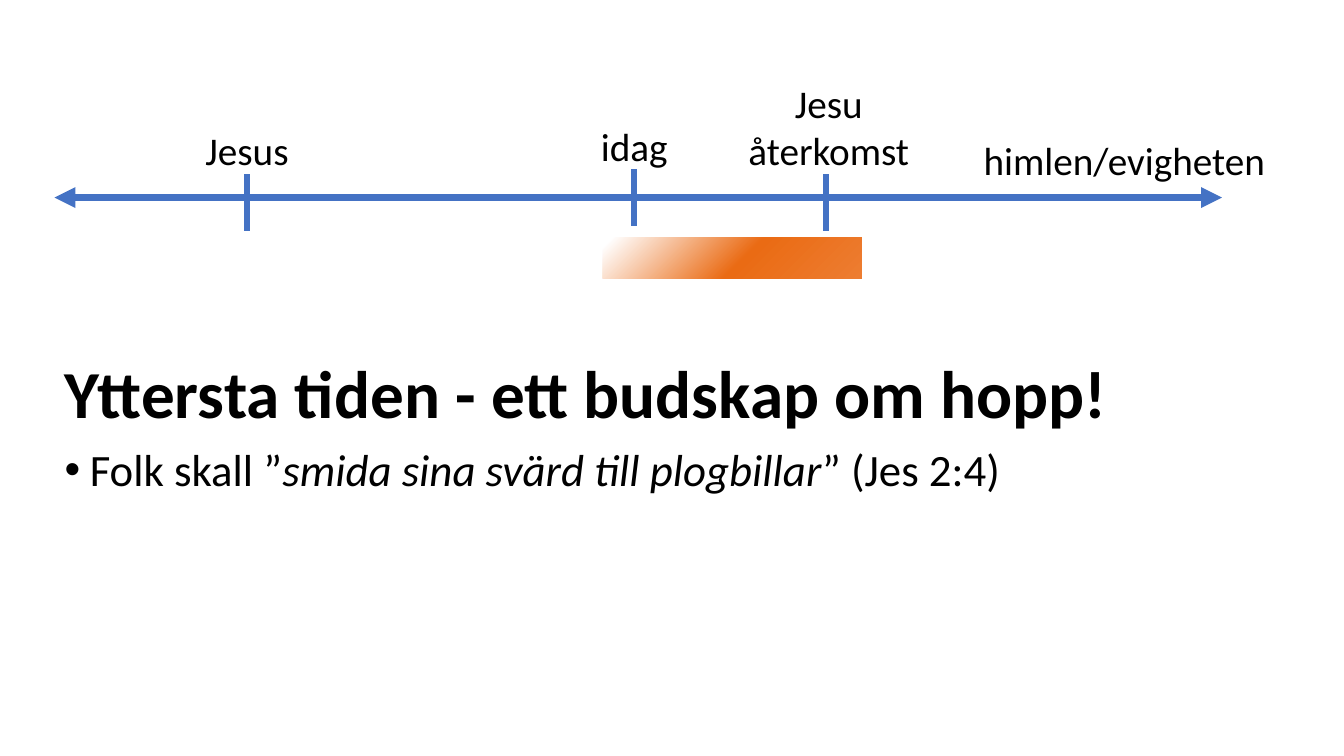
from dataclasses import dataclass

from lxml.etree import SubElement
from pptx import Presentation
from pptx.dml.color import RGBColor
from pptx.enum.shapes import MSO_CONNECTOR as Connector, MSO_SHAPE as Shape
from pptx.enum.text import MSO_AUTO_SIZE as AutoSize, MSO_ANCHOR as Anchor, PP_ALIGN as Align
from pptx.oxml import parse_xml
from pptx.oxml.ns import nsdecls, qn
from pptx.util import Inches, Pt


@dataclass(frozen=True)
class Theme:
    """Colours, font and sizes of the slide."""
    font: str = "Calibri"
    text: RGBColor = RGBColor(0, 0, 0)
    line: RGBColor = RGBColor(0x44, 0x72, 0xC4)
    glow: tuple = ((0, "ED7D31"), (46, "EA6B14"), (97, "FFFFFF"))
    heading: int = 48
    bullet: int = 32
    label: int = 28
    axis: int = 5
    tick: int = 4


@dataclass(frozen=True)
class Box:
    """An area of the slide in inches."""
    left: float
    top: float
    width: float
    height: float

    def within(self, left, top, width, height):
        """Return lengths for an area offset from this box."""
        return [Inches(n) for n in (self.left + left, self.top + top, width, height)]


THEME = Theme()
TIMELINE = Box(0.54, 0.74, 11.58, 2.02)
MESSAGE = Box(0.54, 3.53, 12.44, 3.64)
AXIS_Y = 1.22
TICK_HEIGHT = 0.56
LABELS = (
    ("Jesus", 1.91, 1.03, 1.04, 0.57, 0.99),
    ("idag", 5.75, 0.99, 0.87, 0.57, 0.94),
    ("Jesu återkomst", 7.68, 1.04, 1.92, 1.04, 0.99),
    ("himlen/evigheten", 10.61, 1.13, 3.02, 0.57, None),
)
TICK_X = {"Jesu återkomst": 7.65}


def apply_format(target, values):
    """Set every attribute in values on the target."""
    for name, value in values.items():
        setattr(target, name, value)


def add_run(paragraph, text, size, **values):
    """Add a run in the theme font."""
    run = paragraph.add_run()
    run.text = text
    apply_format(run.font, {"name": THEME.font, "size": Pt(size), **values})
    run.font.color.rgb = THEME.text


def add_line(slide, box, start, end, weight, arrows=False):
    """Draw a straight line between two points of the box."""
    points = [Inches(n) for x, y in (start, end) for n in (box.left + x, box.top + y)]
    line = slide.shapes.add_connector(Connector.STRAIGHT, *points)
    line.line.color.rgb = THEME.line
    line.line.width = Pt(weight)
    if arrows:
        for end_tag in ("a:headEnd", "a:tailEnd"):
            SubElement(line.line._ln, qn(end_tag), type="triangle")
    SubElement(line._element.spPr, qn("a:effectLst"))


def add_label(slide, box, text, centre, bottom, width, height):
    """Write a centred label that stands on the given bottom."""
    area = box.within(centre - width / 2, bottom - height, width, height)
    frame = slide.shapes.add_textbox(*area).text_frame
    apply_format(frame, {"word_wrap": " " in text, "auto_size": AutoSize.SHAPE_TO_FIT_TEXT})
    paragraph = frame.paragraphs[0]
    paragraph.alignment = Align.CENTER
    add_run(paragraph, text, THEME.label)


def add_end_times(slide, box):
    """Add the bar that fades in below the timeline."""
    bar = slide.shapes.add_shape(Shape.RECTANGLE, *box.within(5.44, 1.62, 2.57, 0.4))
    bar.shadow.inherit = False
    bar.line.fill.background()
    bar.fill.background()
    stops = "".join(
        f'<a:gs pos="{share * 1000}"><a:srgbClr val="{colour}"/></a:gs>'
        for share, colour in THEME.glow)
    gradient = parse_xml(
        f'<a:gradFill {nsdecls("a")} rotWithShape="1"><a:gsLst>{stops}</a:gsLst>'
        '<a:path path="circle"><a:fillToRect l="100000" t="100000"/></a:path>'
        '<a:tileRect r="-100000" b="-100000"/></a:gradFill>')
    properties = bar._element.spPr
    properties.replace(properties.find(qn("a:noFill")), gradient)


def add_timeline(slide, box):
    """Draw the axis with its ticks, labels and bar."""
    add_line(slide, box, (0, AXIS_Y), (box.width, AXIS_Y), THEME.axis, arrows=True)
    for text, centre, bottom, width, height, tick_top in LABELS:
        if tick_top is not None:
            x = TICK_X.get(text, centre)
            add_line(slide, box, (x, tick_top), (x, tick_top + TICK_HEIGHT), THEME.tick)
        add_label(slide, box, text, centre, bottom, width, height)
    add_end_times(slide, box)


def set_bullet(paragraph, indent, character=None):
    """Give a paragraph a hanging bullet, or none."""
    properties = paragraph._p.get_or_add_pPr()
    properties.set("marL", str(Inches(indent)))
    properties.set("indent", str(-Inches(indent)))
    if character:
        SubElement(properties, qn("a:buFont"), typeface="Arial")
        SubElement(properties, qn("a:buChar"), char=character)
    else:
        SubElement(properties, qn("a:buNone"))


def add_message(slide, box):
    """Fill the body placeholder with the heading and its bullet."""
    body = slide.placeholders[1]
    apply_format(body, dict(zip(("left", "top", "width", "height"),
                                box.within(0, 0, box.width, box.height))))
    frame = body.text_frame
    apply_format(frame, {"word_wrap": True, "auto_size": AutoSize.NONE,
                         "vertical_anchor": Anchor.TOP})
    heading, bullet = frame.paragraphs[0], frame.add_paragraph()
    for paragraph in (heading, bullet):
        apply_format(paragraph, {"line_spacing": 0.9, "space_before": Pt(10),
                                 "alignment": Align.LEFT})
    set_bullet(heading, 0)
    set_bullet(bullet, 0.25, "•")
    add_run(heading, "Yttersta tiden - ett budskap om hopp!", THEME.heading, bold=True)
    for text, italic in (("Folk skall ”", False),
                         ("smida sina svärd till plogbillar", True),
                         ("” (Jes 2:4)", False)):
        add_run(bullet, text, THEME.bullet, italic=italic)


def main():
    """Build and save the presentation."""
    presentation = Presentation()
    apply_format(presentation, {"slide_width": Inches(13.33), "slide_height": Inches(7.5)})
    slide = presentation.slides.add_slide(presentation.slide_layouts[1])
    title = slide.shapes.title._element
    title.getparent().remove(title)
    add_message(slide, MESSAGE)
    add_timeline(slide, TIMELINE)
    presentation.save("out.pptx")


if __name__ == "__main__":
    main()
